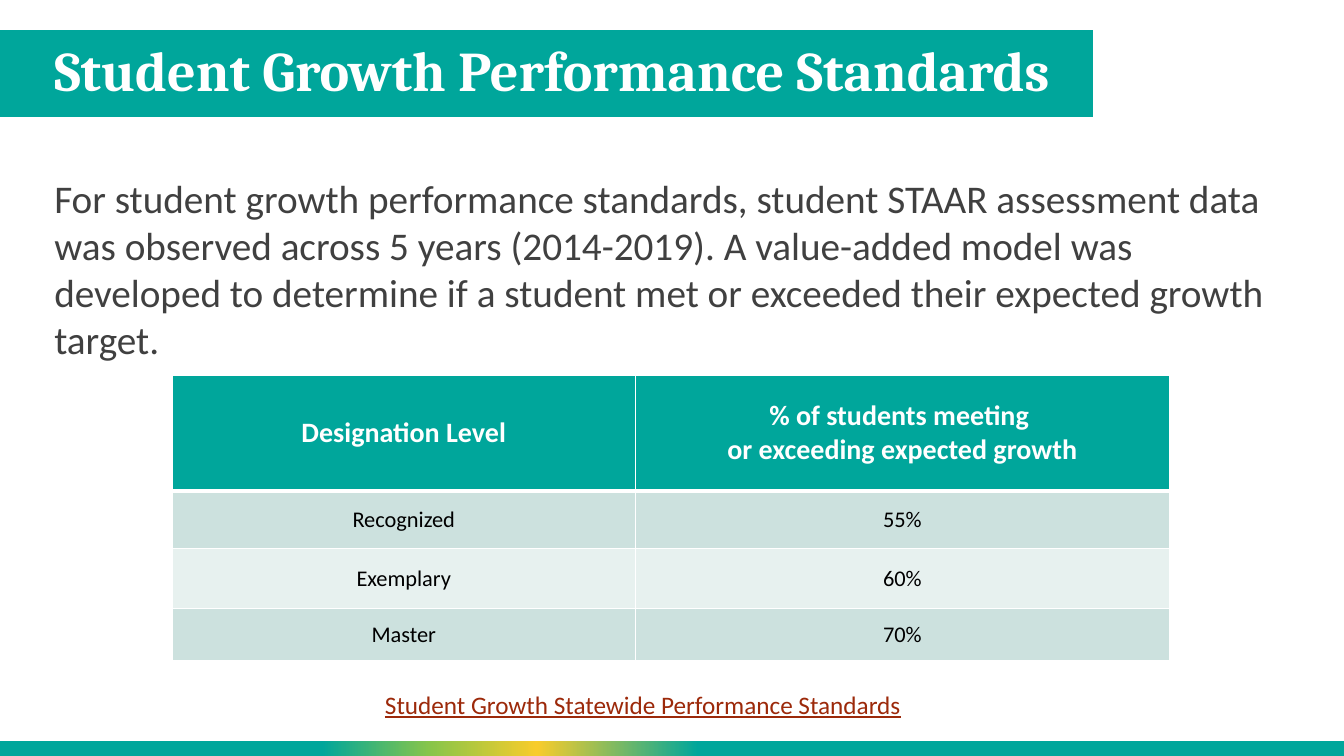
from dataclasses import dataclass

from lxml.etree import SubElement
from pptx import Presentation
from pptx.dml.color import RGBColor
from pptx.enum.shapes import MSO_SHAPE
from pptx.enum.text import MSO_ANCHOR as Anchor, PP_ALIGN as Align
from pptx.oxml.ns import qn
from pptx.util import Emu, Pt

EMU_PER_PX = 9144  # 100 px to the inch
TEAL, WHITE, BLACK = "00A69B", "FFFFFF", "000000"
ROW_FILLS = ["CCE1DE", "E7F1EF"]
FOOTER_STOPS = [(0, TEAL), (24, TEAL), (32, "87C54A"),
                (40, "F8CC2B"), (52, TEAL), (100, TEAL)]
COLUMN_WIDTHS = [459, 530]
ROW_HEIGHTS = [115, 57, 60, 51]
TABLE_ROWS = [
    ("Designation Level", "% of students meeting \vor exceeding expected growth"),
    ("Recognized", "55%"),
    ("Exemplary", "60%"),
    ("Master", "70%"),
]


@dataclass(frozen=True)
class Box:
    left: int
    top: int
    width: int
    height: int

    def emu(self) -> list[Emu]:
        return [px(n) for n in (self.left, self.top, self.width, self.height)]


@dataclass(frozen=True)
class Style:
    size: int
    color: str
    font: str = "Calibri"
    bold: bool = False
    underline: bool = False


@dataclass(frozen=True)
class Label:
    box: Box
    text: str
    style: Style
    anchor: Anchor = Anchor.TOP
    line_spacing: float = 1.0


LABELS = [
    Label(Box(44, 30, 1041, 86), "Student Growth Performance Standards",
          Style(40, WHITE, "Cambria", bold=True), Anchor.MIDDLE, 0.9),
    Label(Box(44, 168, 1244, 487),
          "For student growth performance standards, student STAAR assessment data "
          "was observed across 5 years (2014-2019). A value-added model was developed "
          "to determine if a student met or exceeded their expected growth target.",
          Style(28, "404040")),
    Label(Box(372, 679, 540, 40), "Student Growth Statewide Performance Standards",
          Style(18, "9C290A", underline=True)),
]
HEADER_STYLE = Style(20, WHITE, bold=True)
BODY_STYLE = Style(16, BLACK)


def px(length: int) -> Emu:
    return Emu(length * EMU_PER_PX)


def rgb(color: str) -> RGBColor:
    return RGBColor.from_string(color)


def fill_solid(target, color: str) -> None:
    target.fill.solid()
    target.fill.fore_color.rgb = rgb(color)


def format_runs(paragraph, style: Style) -> None:
    for run in paragraph.runs:
        font = run.font
        font.name, font.size = style.font, Pt(style.size)
        font.bold, font.underline = style.bold, style.underline
        font.color.rgb = rgb(style.color)


def add_bar(slide, box: Box):
    shape = slide.shapes.add_shape(MSO_SHAPE.RECTANGLE, *box.emu())
    shape.shadow.inherit = False
    shape.line.fill.background()
    fill_solid(shape, TEAL)
    return shape


def fill_gradient(shape, stops: list[tuple[int, str]]) -> None:
    """Fill from left to right with stops given as (percent, colour)."""
    shape.fill.gradient()
    shape.fill.gradient_angle = 0
    stop_list = next(shape.element.iter(qn("a:gsLst")))
    for child in list(stop_list):
        stop_list.remove(child)
    for percent, color in stops:
        stop = SubElement(stop_list, qn("a:gs"), pos=str(percent * 1000))
        SubElement(stop, qn("a:srgbClr"), val=color)


def add_label(slide, label: Label) -> None:
    text_frame = slide.shapes.add_textbox(*label.box.emu()).text_frame
    text_frame.word_wrap = True
    text_frame.vertical_anchor = label.anchor
    text_frame.text = label.text
    paragraph = text_frame.paragraphs[0]
    paragraph.line_spacing = label.line_spacing
    format_runs(paragraph, label.style)


def set_borders(cell, top: int, bottom: int) -> None:
    """Draw white borders; top and bottom are widths in points."""
    properties = cell._tc.get_or_add_tcPr()
    for side, width in (("L", 1), ("R", 1), ("T", top), ("B", bottom)):
        line = SubElement(properties, qn(f"a:ln{side}"), w=str(Pt(width)))
        fill = SubElement(line, qn("a:solidFill"))
        SubElement(fill, qn("a:srgbClr"), val=WHITE)


def add_standards_table(slide) -> None:
    box = Box(171, 372, sum(COLUMN_WIDTHS), sum(ROW_HEIGHTS))
    table = slide.shapes.add_table(len(TABLE_ROWS), len(COLUMN_WIDTHS), *box.emu()).table
    for column, width in zip(table.columns, COLUMN_WIDTHS):
        column.width = px(width)
    for index, (row, height, texts) in enumerate(zip(table.rows, ROW_HEIGHTS, TABLE_ROWS)):
        row.height = px(height)
        is_header = index == 0
        for cell, text in zip(row.cells, texts):
            cell.text_frame.text = text
            cell.vertical_anchor = Anchor.MIDDLE
            paragraph = cell.text_frame.paragraphs[0]
            paragraph.alignment = Align.CENTER
            format_runs(paragraph, HEADER_STYLE if is_header else BODY_STYLE)
            set_borders(cell, top=3 if index == 1 else 1, bottom=3 if is_header else 1)
            fill_solid(cell, TEAL if is_header else ROW_FILLS[(index - 1) % 2])


def main() -> None:
    presentation = Presentation()
    presentation.slide_width, presentation.slide_height = px(1333), px(750)
    slide = presentation.slides.add_slide(presentation.slide_layouts[6])
    add_bar(slide, Box(-1, 30, 1085, 86))
    footer = add_bar(slide, Box(-1, 735, 1334, 15))
    fill_gradient(footer, FOOTER_STOPS)
    for label in LABELS:
        add_label(slide, label)
    add_standards_table(slide)
    presentation.save("out.pptx")


if __name__ == "__main__":
    main()
